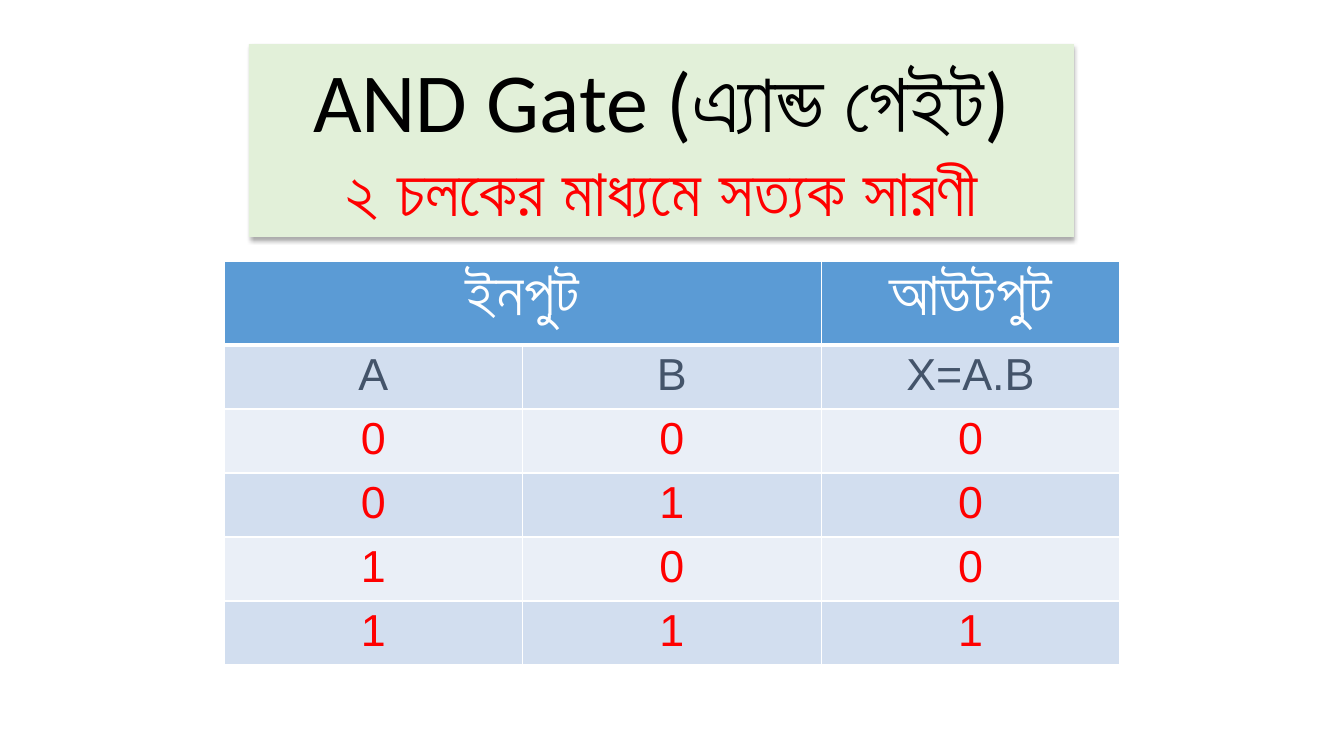
import lxml.etree
import pptx
import pptx.dml.color
import pptx.enum.shapes
import pptx.enum.text
import pptx.oxml
import pptx.oxml.ns
import pptx.util

# Content
TITLE_LINES = [
    ("AND Gate (এ্যান্ড গেইট)", "title"),
    ("২ চলকের মাধ্যমে সত্যক সারণী", "subtitle"),
]
TRUTH_TABLE = [
    ("header", ["ইনপুট", "", "আউটপুট"]),
    ("variable", ["A", "B", "X=A.B"]),
    ("value", ["0", "0", "0"]),
    ("value", ["0", "1", "0"]),
    ("value", ["1", "0", "0"]),
    ("value", ["1", "1", "1"]),
]

# Layout in px
PAGE_SIZE = (1344, 756)
TITLE_BOX = (249, 44, 825, 193)
TABLE_LEFT, TABLE_TOP, TABLE_WIDTH = 224, 261, 896
HEADER_HEIGHT, ROW_HEIGHT = 84, 64

THEME = {
    "panel": "E2F0D9",
    "header": "5B9BD5",
    "bands": ["D2DEEF", "EAEFF7"],
    "border": "FFFFFF",
    "thin": 1,
    "thick": 3,
    "text": {
        "title": ("000000", {"name": "Calibri", "size": 60, "bold": False}),
        "subtitle": ("FF0000", {"name": "Calibri", "size": 48, "bold": True}),
        "header": ("FFFFFF", {"name": "Calibri", "size": 44, "bold": True}),
        "variable": ("44546A", {"name": "Arial", "size": 32, "bold": False}),
        "value": ("FF0000", {"name": "Arial", "size": 32, "bold": False}),
    },
}
SHADOW = """<a:effectLst %s><a:outerShdw blurRad="44450" dist="27940" dir="5400000" algn="ctr">
<a:srgbClr val="000000"><a:alpha val="32000"/></a:srgbClr></a:outerShdw></a:effectLst>"""


def px(length):
    return pptx.util.Emu(round(length * 914400 / 100.8))


def paint(fill, color):
    fill.solid()
    fill.fore_color.rgb = pptx.dml.color.RGBColor.from_string(color)


def write(para, text, role):
    color, formats = THEME["text"][role]
    para.alignment = pptx.enum.text.PP_ALIGN.CENTER
    span = para.add_run()
    span.text = text
    for name, value in formats.items():
        setattr(span.font, name, pptx.util.Pt(value) if name == "size" else value)
    span.font.color.rgb = pptx.dml.color.RGBColor.from_string(color)


def add_borders(cell, widths):
    properties = cell._tc.get_or_add_tcPr()
    for index, (side, width) in enumerate(widths.items()):
        line = lxml.etree.Element(pptx.oxml.ns.qn("a:ln" + side), w=str(pptx.util.Pt(width)))
        solid = lxml.etree.SubElement(line, pptx.oxml.ns.qn("a:solidFill"))
        lxml.etree.SubElement(solid, pptx.oxml.ns.qn("a:srgbClr"), val=THEME["border"])
        properties.insert(index, line)


def add_title(page):
    box = page.shapes.add_shape(
        pptx.enum.shapes.MSO_SHAPE.RECTANGLE, *[px(length) for length in TITLE_BOX])
    paint(box.fill, THEME["panel"])
    box.line.fill.background()
    box._element.spPr.append(pptx.oxml.parse_xml(SHADOW % pptx.oxml.ns.nsdecls("a")))
    frame = box.text_frame
    frame.word_wrap = True
    frame.auto_size = pptx.enum.text.MSO_AUTO_SIZE.SHAPE_TO_FIT_TEXT
    frame.vertical_anchor = pptx.enum.text.MSO_ANCHOR.TOP
    for index, (text, role) in enumerate(TITLE_LINES):
        write(frame.add_paragraph() if index else frame.paragraphs[0], text, role)


def add_truth_table(page):
    heights = [HEADER_HEIGHT] + [ROW_HEIGHT] * (len(TRUTH_TABLE) - 1)
    column_count = len(TRUTH_TABLE[0][1])
    table = page.shapes.add_table(
        len(TRUTH_TABLE), column_count, px(TABLE_LEFT), px(TABLE_TOP),
        px(TABLE_WIDTH), px(sum(heights))).table
    for column in table.columns:
        column.width = px(TABLE_WIDTH / column_count)
    for row, (role, texts) in enumerate(TRUTH_TABLE):
        table.rows[row].height = px(heights[row])
        widths = dict.fromkeys("LRTB", THEME["thin"])
        if row < 2:  # heavy rule between header and body
            widths["T" if row else "B"] = THEME["thick"]
        for column, text in enumerate(texts):
            cell = table.cell(row, column)
            paint(cell.fill, THEME["bands"][(row - 1) % 2] if row else THEME["header"])
            add_borders(cell, widths)
            if text:
                write(cell.text_frame.paragraphs[0], text, role)
    table.cell(0, 0).merge(table.cell(0, 1))


def main():
    deck = pptx.Presentation()
    deck.slide_width, deck.slide_height = [px(length) for length in PAGE_SIZE]
    page = deck.slides.add_slide(deck.slide_layouts[6])
    add_title(page)
    add_truth_table(page)
    deck.save("out.pptx")


if __name__ == "__main__":
    main()
